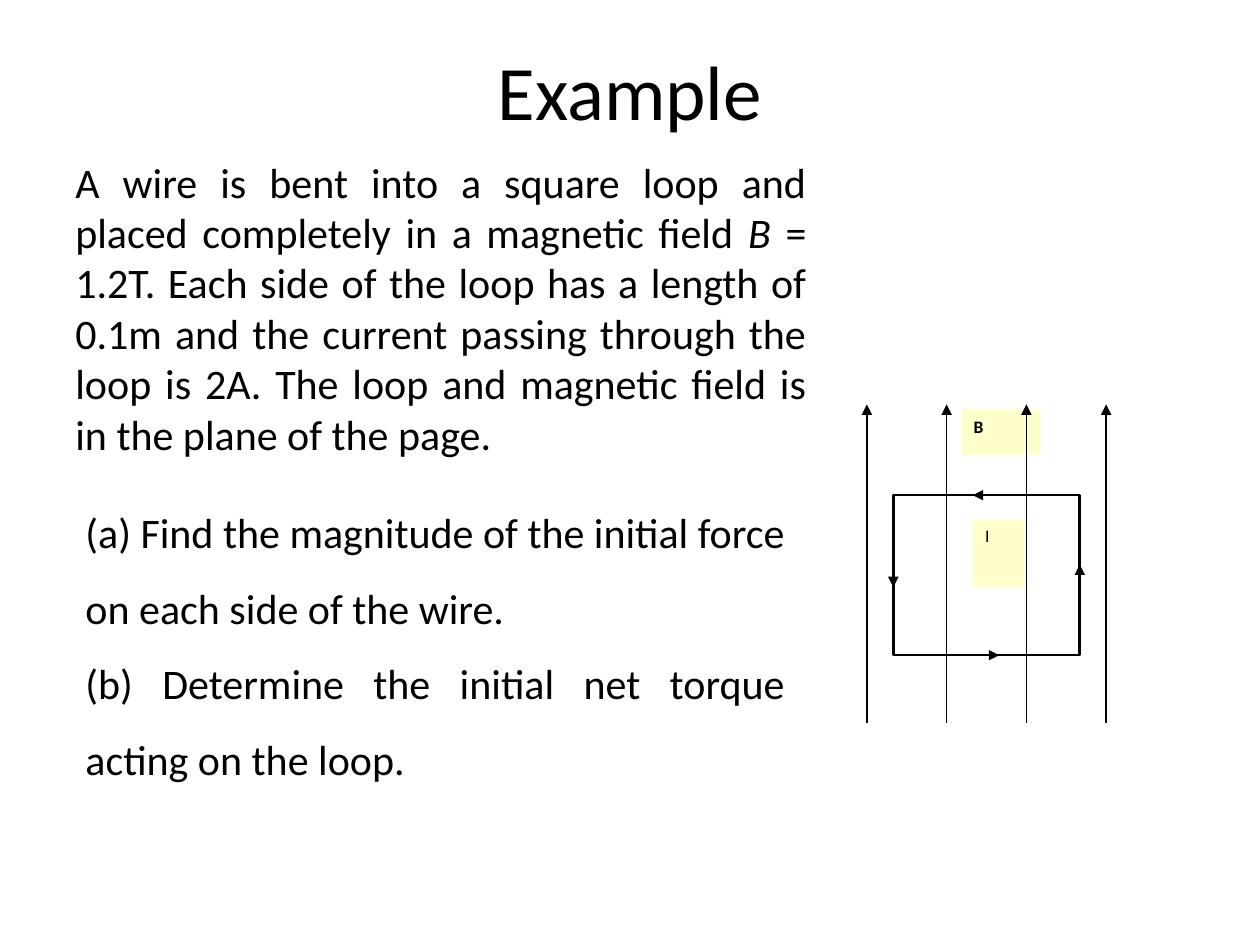
from lxml.etree import SubElement
from pptx import Presentation
from pptx.dml.color import RGBColor
from pptx.enum.shapes import MSO_CONNECTOR, MSO_SHAPE
from pptx.enum.text import MSO_ANCHOR, PP_ALIGN
from pptx.oxml.ns import qn
from pptx.util import Inches, Pt

BLACK = RGBColor(0, 0, 0)
PALE_YELLOW = RGBColor(255, 255, 204)
COLUMNS, ROWS = 100, 75


class SlideBuilder:
    """Draws on one slide; lengths are columns and rows of a 100 by 75 grid."""
    font_name = "Calibri"

    def __init__(self, deck):
        self.column = deck.slide_width / COLUMNS
        self.row = deck.slide_height / ROWS
        self.page = deck.slides.add_slide(deck.slide_layouts[6])

    def place(self, *lengths):
        """Turn alternating columns and rows into slide units."""
        units = (self.column, self.row)
        return [round(length * units[i % 2]) for i, length in enumerate(lengths)]

    def set_paragraph(self, para, spans, size, align, bold=False, spacing=None):
        """Fill a paragraph with (words, italic) spans."""
        para.alignment = align
        para.line_spacing = spacing
        font = para.font
        font.name, font.size, font.bold = self.font_name, Pt(size), bold
        font.color.rgb = BLACK
        for words, italic in spans:
            span = para.add_run()
            span.text = words
            if italic:
                span.font.italic = True

    def text(self, area, paragraphs, size, align, spacing=None, rows_above=0.5):
        frame = self.page.shapes.add_textbox(*self.place(*area)).text_frame
        frame.word_wrap = True
        frame.vertical_anchor = MSO_ANCHOR.TOP
        frame.margin_top = round(rows_above * self.row)
        for index, spans in enumerate(paragraphs):
            para = frame.add_paragraph() if index else frame.paragraphs[0]
            self.set_paragraph(para, spans, size, align, spacing=spacing)

    def rectangle(self, area, fill=None, line_width=None):
        box = self.page.shapes.add_shape(MSO_SHAPE.RECTANGLE, *self.place(*area))
        box.shadow.inherit = False
        if fill is None:
            box.fill.background()
        else:
            box.fill.solid()
            box.fill.fore_color.rgb = fill
        if line_width is None:
            box.line.fill.background()
        else:
            box.line.color.rgb = BLACK
            box.line.width = Pt(line_width)
        return box

    def label(self, area, words, bold=False):
        frame = self.rectangle(area, fill=PALE_YELLOW).text_frame
        frame.vertical_anchor = MSO_ANCHOR.TOP
        self.set_paragraph(frame.paragraphs[0], [(words, False)], 10, PP_ALIGN.LEFT, bold)

    def arrow(self, *ends):
        line = self.page.shapes.add_connector(MSO_CONNECTOR.STRAIGHT, *self.place(*ends))
        line.line.color.rgb = BLACK
        line.line.width = Pt(0.75)
        properties = line._element.spPr
        SubElement(properties.find(qn("a:ln")), qn("a:tailEnd"), type="triangle")
        SubElement(properties, qn("a:effectLst"))


def draw_field(slide):
    slide.label((76.3, 32.5, 6.3, 3.6), "B", bold=True)
    first, gap = 68.8, 6.33
    for index in range(4):
        x = first + index * gap
        slide.arrow(x, 57.4, x, 32.1)


def draw_loop(slide):
    left, top, width, height = 70.9, 39.3, 14.8, 12.7
    right, bottom = left + width, top + height
    slide.rectangle((left, top, width, height), line_width=1.5)
    slide.arrow(right, bottom, right, 44.8)
    slide.arrow(right, top, 77.2, top)
    slide.arrow(left, 41.1, left, 46.6)
    slide.arrow(left, bottom, 79.3, bottom)
    slide.label((77.2, 41.2, 4.2, 5.4), "I")


def main():
    deck = Presentation()
    deck.slide_width, deck.slide_height = Inches(10), Inches(7.5)
    slide = SlideBuilder(deck)
    slide.text((5, 11.9, 60, 29.3), [[
        ("A wire is bent into a square loop and placed completely in a magnetic field ", False),
        ("B", True),
        (" = 1.2T. Each side of the loop has a length of 0.1m and the current passing "
         "through the loop is 2A. The loop and magnetic field is in the plane of the page.", False),
    ]], 24, PP_ALIGN.JUSTIFY)
    draw_field(slide)
    draw_loop(slide)
    slide.text((5.8, 31.6, 57.5, 37.4), [
        [("(a) Find the magnitude of the initial force on each side of the wire.", False)],
        [("(b) Determine the initial net torque acting on the loop.", False)],
    ], 24, PP_ALIGN.JUSTIFY, spacing=1.5, rows_above=6.6)
    slide.text((5, 3, 90, 12.5), [[("Example", False)]], 44, PP_ALIGN.CENTER)
    deck.save("out.pptx")


if __name__ == "__main__":
    main()
